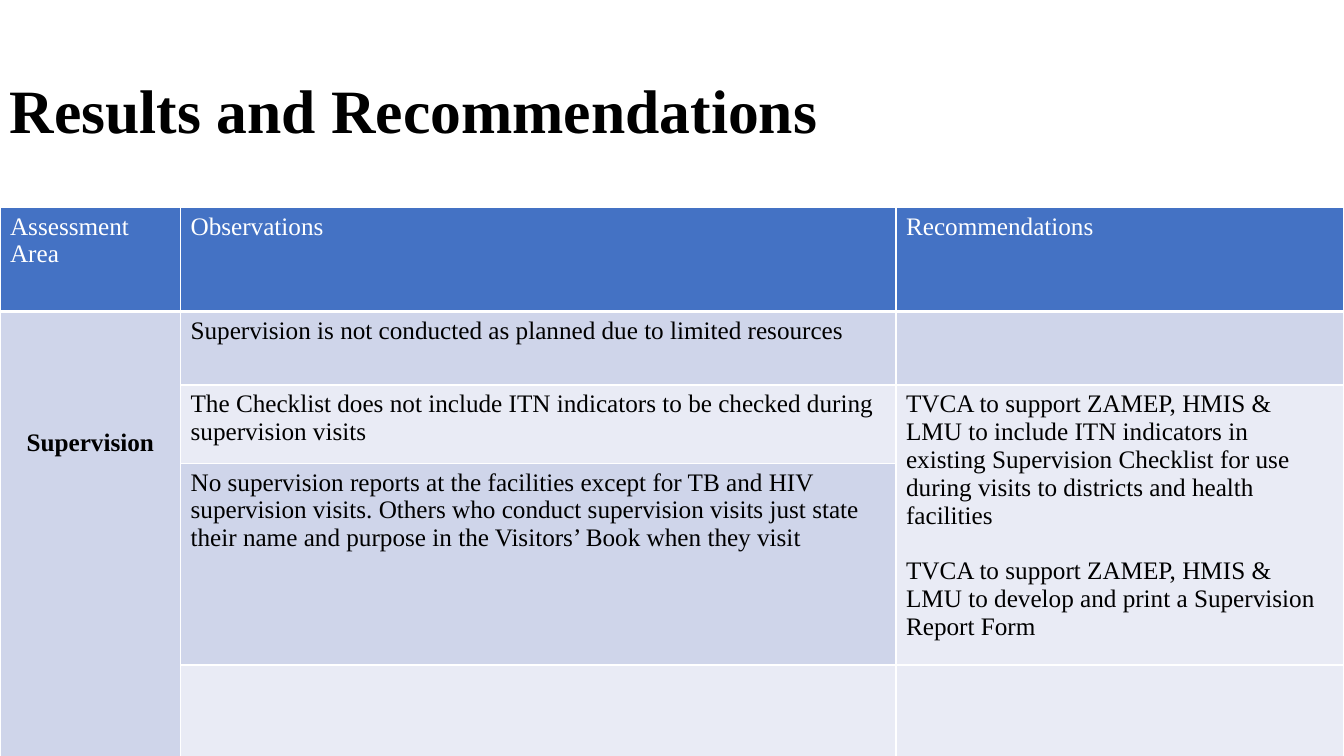
import pptx
import pptx.dml.color
import pptx.enum.text
import pptx.oxml
import pptx.oxml.ns
import pptx.util

Cm, Pt = pptx.util.Cm, pptx.util.Pt
ALIGN = pptx.enum.text.PP_ALIGN
BLUE, BAND_DARK, BAND_LIGHT = "4472C4", "CFD5EA", "E9EBF5"
BLACK, WHITE = "000000", "FFFFFF"

BODY = {"name": "Times New Roman", "size": Pt(18), "bold": False}
STRONG = {**BODY, "bold": True}
TITLE = {**STRONG, "size": Pt(44)}

COLUMN_WIDTHS = [4.55, 18.03, 11.28]
ROW_HEIGHTS = [2.62, 1.85, 1.98, 4.62, 2.74]
ROW_FILLS = [BLUE, BAND_DARK, BAND_LIGHT, BAND_DARK, BAND_LIGHT]
HEADINGS = ["Assessment Area", "Observations", "Recommendations"]
OBSERVATIONS = [
    "Supervision is not conducted as planned due to limited resources",
    "The Checklist does not include ITN indicators to be checked during "
    "supervision visits",
    "No supervision reports at the facilities except for TB and HIV "
    "supervision visits. Others who conduct supervision visits just state "
    "their name and purpose in the Visitors’ Book when they visit",
]
RECOMMENDATIONS = [
    "TVCA to support ZAMEP, HMIS & LMU to include ITN indicators in existing "
    "Supervision Checklist for use during visits to districts and health "
    "facilities",
    "TVCA to support ZAMEP, HMIS & LMU to develop and print a Supervision "
    "Report Form",
]


def rgb(value):
    return pptx.dml.color.RGBColor.from_string(value)


def write(frame, paragraphs, formats, color=BLACK, align=ALIGN.LEFT, gap=0):
    """Fill a text frame, with a gap in points between paragraphs."""
    for index, text in enumerate(paragraphs):
        paragraph = frame.paragraphs[0] if index == 0 else frame.add_paragraph()
        paragraph.alignment = align
        if index:
            paragraph.space_before = Pt(gap)
        run = paragraph.add_run()
        run.text = text
        for key, value in formats.items():
            setattr(run.font, key, value)
        run.font.color.rgb = rgb(color)


def add_title(slide, text):
    title = slide.shapes.add_textbox(Cm(0), Cm(1.01), Cm(33.87), Cm(3.68))
    frame = title.text_frame
    frame.word_wrap = True
    frame.vertical_anchor = pptx.enum.text.MSO_ANCHOR.MIDDLE
    write(frame, [text], TITLE)
    frame.paragraphs[0].line_spacing = 0.9


def style_cell(cell, fill, bottom_width):
    """Give a cell white borders and a plain fill."""
    properties = cell._tc.get_or_add_tcPr()
    widths = {"lnL": 1, "lnR": 1, "lnT": 1, "lnB": bottom_width}
    for side, width in widths.items():
        properties.append(pptx.oxml.parse_xml(
            f'<a:{side} {pptx.oxml.ns.nsdecls("a")} w="{Pt(width)}">'
            f'<a:solidFill><a:srgbClr val="{WHITE}"/></a:solidFill></a:{side}>'))
    cell.fill.solid()
    cell.fill.fore_color.rgb = rgb(fill)


def add_grid(slide):
    grid = slide.shapes.add_table(
        len(ROW_HEIGHTS), len(COLUMN_WIDTHS), Cm(0), Cm(5.23),
        Cm(sum(COLUMN_WIDTHS)), Cm(sum(ROW_HEIGHTS))).table
    for column, width in zip(grid.columns, COLUMN_WIDTHS):
        column.width = Cm(width)
    for index, (row, height) in enumerate(zip(grid.rows, ROW_HEIGHTS)):
        row.height = Cm(height)
        for cell in row.cells:
            style_cell(cell, ROW_FILLS[index], 1 if index else 3)
    return grid


def main():
    deck = pptx.Presentation()
    deck.slide_width, deck.slide_height = Cm(33.87), Cm(19.05)
    slide = deck.slides.add_slide(deck.slide_layouts[6])

    add_title(slide, "Results and Recommendations")
    grid = add_grid(slide)

    # Header row
    for column, heading in enumerate(HEADINGS):
        write(grid.cell(0, column).text_frame, [heading], BODY, WHITE)

    # Assessment area, spanning all body rows
    area = grid.cell(1, 0)
    area.merge(grid.cell(4, 0))
    area.margin_top = Cm(2.95)
    write(area.text_frame, ["Supervision"], STRONG, align=ALIGN.CENTER)

    # Observations
    for row, observation in enumerate(OBSERVATIONS, start=1):
        write(grid.cell(row, 1).text_frame, [observation], BODY)

    # Recommendations, spanning the last two observations
    advice = grid.cell(2, 2)
    advice.merge(grid.cell(3, 2))
    write(advice.text_frame, RECOMMENDATIONS, BODY, gap=20)

    deck.save("out.pptx")


if __name__ == "__main__":
    main()
